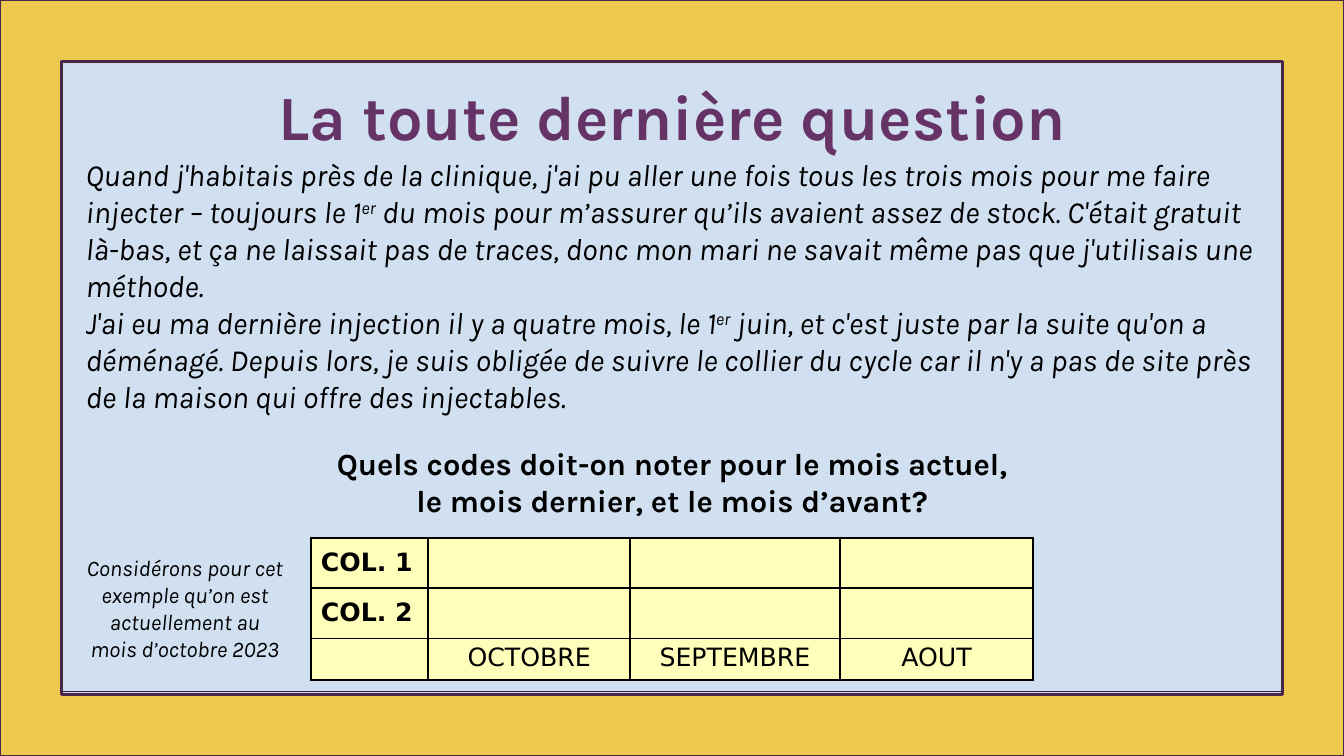
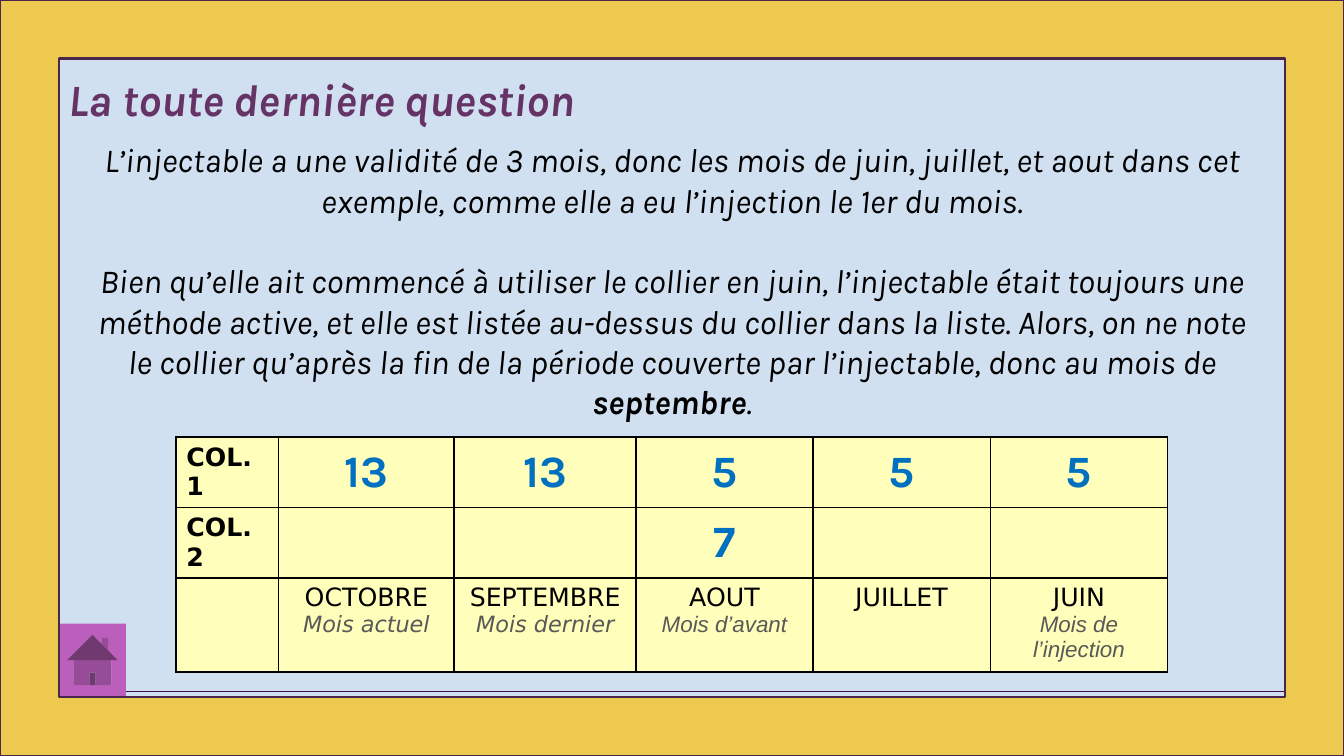
from lxml.etree import SubElement
from pptx import Presentation
from pptx.dml.color import RGBColor
from pptx.enum.shapes import MSO_CONNECTOR as Connector, MSO_SHAPE as Preset
from pptx.enum.text import MSO_ANCHOR as Anchor, PP_ALIGN as Align
from pptx.oxml.ns import qn
from pptx.util import Pt

WIDTH, HEIGHT = 960, 540
INK, PURPLE, BLUE, GREY = "000000", "663366", "0070C0", "595959"
SKY, GOLD, PLUM, RULE = "D1E0F0", "EDC950", "4B264B", "411044"
CREAM, ORCHID = "FFFEBA", "BC5FBC"
SANS, TABLE_FONT = "Karla", "DejaVu Sans"

TITLE = "La toute dernière question"
RAISED_ER = ("er", {"raised": True})
QUESTION = {"bold": True, "italic": False, "align": Align.CENTER}
STORY = [
    (["Quand j'habitais près de la clinique, j'ai pu aller une fois tous les trois mois pour me faire "
      "injecter – toujours le 1", RAISED_ER,
      " du mois pour m’assurer qu’ils avaient assez de stock. C'était gratuit là-bas, et ça ne laissait "
      "pas de traces, donc mon mari ne savait même pas que j'utilisais une méthode."], {}),
    (["J'ai eu ma dernière injection il y a quatre mois, le 1", RAISED_ER,
      " juin, et c'est juste par la suite qu'on a déménagé. Depuis lors, je suis obligée de suivre le "
      "collier du cycle car il n'y a pas de site près de la maison qui offre des injectables."], {}),
    (["Quels codes doit-on noter pour le mois actuel,"], {**QUESTION, "before": 21.6}),
    (["le mois dernier, et le mois d’avant?"], QUESTION),
]
ASSUMPTION = [(["Considérons pour cet exemple qu’on est actuellement au mois d’octobre 2023"], {})]
EXPLANATION = [
    (["L’injectable a une validité de 3 mois, donc les mois de juin, juillet, et aout dans cet exemple, "
      "comme elle a eu l’injection le 1er du mois."], {}),
    (["Bien qu’elle ait commencé à utiliser le collier en juin, l’injectable était toujours une méthode "
      "active, et elle est listée au-dessus du collier dans la liste. Alors, on ne note le collier "
      "qu’après la fin de la période couverte par l’injectable, donc au mois de ",
      ("septembre", {"bold": True}), "."], {"before": 28.8}),
]

QUESTION_MONTHS = [("OCTOBRE", "", TABLE_FONT), ("SEPTEMBRE", "", TABLE_FONT), ("AOUT", "", TABLE_FONT)]
ANSWER_MONTHS = [
    ("OCTOBRE", "Mois actuel", TABLE_FONT),
    ("SEPTEMBRE", "Mois dernier", TABLE_FONT),
    ("AOUT", "Mois d’avant", "Arial"),
    ("JUILLET", "", TABLE_FONT),
    ("JUIN", "Mois de l’injection", "Arial"),
]
NO_CODES = [[""] * 3, [""] * 3]
ANSWER_CODES = [["13", "13", "5", "5", "5"], ["", "", "7", "", ""]]


def color(value):
    return RGBColor.from_string(value)


def write_text(frame, paragraphs, **base):
    for index, (runs, changes) in enumerate(paragraphs):
        paragraph = frame.paragraphs[0] if index == 0 else frame.add_paragraph()
        style = {**base, **changes}
        paragraph.alignment = style.get("align", Align.LEFT)
        if "before" in style:
            paragraph.space_before = Pt(style["before"])
        for item in runs:
            text, extra = (item, {}) if isinstance(item, str) else item
            look = {**style, **extra}
            run = paragraph.add_run()
            run.text = text
            font = run.font
            font.name, font.size = look.get("font", SANS), Pt(look["size"])
            font.bold, font.italic = look.get("bold", False), look.get("italic", False)
            font.color.rgb = color(look.get("color", INK))
            if look.get("raised"):
                font._element.set("baseline", "30000")


def add_text(slide, box, paragraphs, inset=3.6, **style):
    frame = slide.shapes.add_textbox(*map(Pt, box)).text_frame
    frame.word_wrap = True
    frame.margin_top = Pt(inset)
    write_text(frame, paragraphs, **style)


def add_title(slide, box, **style):
    add_text(slide, box, [([TITLE], {})], inset=7.2, bold=True, color=PURPLE, **style)


def add_preset(slide, preset, box, fill, line=None):
    shape = slide.shapes.add_shape(preset, *map(Pt, box))
    shape.shadow.inherit = False
    shape.fill.solid()
    shape.fill.fore_color.rgb = color(fill)
    if line:
        shape.line.color.rgb = color(line)
        shape.line.width = Pt(2)
    else:
        shape.line.fill.background()
    return shape


def start_slide(presentation):
    slide = presentation.slides.add_slide(presentation.slide_layouts[6])
    slide.background.fill.solid()
    slide.background.fill.fore_color.rgb = color(SKY)
    rule = slide.shapes.add_connector(Connector.STRAIGHT, Pt(33), Pt(494), Pt(927), Pt(494))
    rule.line.color.rgb = color(RULE)
    rule.line.width = Pt(1.25)
    SubElement(rule._element.spPr, qn("a:effectLst"))
    return slide


def add_border(slide, thickness):
    border = add_preset(slide, Preset.FRAME, (0, 0, WIDTH, HEIGHT), GOLD, PLUM)
    border.adjustments[0] = thickness


def style_cell(cell):
    properties = cell._tc.get_or_add_tcPr()
    for side in ("lnL", "lnR", "lnT", "lnB"):
        edge = SubElement(properties, qn(f"a:{side}"), w=str(Pt(1.5)))
        SubElement(SubElement(edge, qn("a:solidFill")), qn("a:srgbClr"), val=INK)
    cell.fill.solid()
    cell.fill.fore_color.rgb = color(CREAM)


def add_code_table(slide, left, top, widths, heights, codes, months):
    box = (left, top, sum(widths), sum(heights))
    table = slide.shapes.add_table(len(heights), len(widths), *map(Pt, box)).table
    table.first_row = table.horz_banding = False
    for column, width in zip(table.columns, widths):
        column.width = Pt(width)
    for row, height in zip(table.rows, heights):
        row.height = Pt(height)
    for cell in table.iter_cells():
        style_cell(cell)

    for index, values in enumerate(codes):
        label = table.cell(index, 0)
        label.vertical_anchor = Anchor.MIDDLE
        write_text(label.text_frame, [([f"COL. {index + 1}"], {})], size=18, font=TABLE_FONT, bold=True)
        for position, value in enumerate(values, 1):
            if value:
                cell = table.cell(index, position)
                cell.vertical_anchor = Anchor.MIDDLE
                write_text(cell.text_frame, [([value], {})], size=32, bold=True, color=BLUE,
                           align=Align.CENTER)

    for position, (month, note, note_font) in enumerate(months, 1):
        lines = [([month], {})]
        if note:
            lines.append(([note], {"size": 16, "font": note_font, "color": GREY, "italic": True}))
        write_text(table.cell(len(codes), position).text_frame, lines, size=18, font=TABLE_FONT,
                   align=Align.CENTER)


def build_question(presentation):
    slide = start_slide(presentation)
    add_title(slide, (159, 48, 642, 72), size=45, align=Align.CENTER)
    add_text(slide, (54, 108, 852, 276), STORY, size=22, italic=True)
    add_border(slide, 0.081)
    add_code_table(slide, 222, 384, [84, 144, 150, 138], [36, 36, 29.5], NO_CODES, QUESTION_MONTHS)
    add_text(slide, (54, 392.5, 156, 85), ASSUMPTION, size=16, italic=True, align=Align.CENTER)


def build_answer(presentation):
    slide = start_slide(presentation)
    add_title(slide, (42, 44, 480, 70), size=32, italic=True)
    add_preset(slide, Preset.ACTION_BUTTON_HOME, (42, 445.5, 48, 52), ORCHID)
    add_text(slide, (59, 96, 842, 211), EXPLANATION, size=24, italic=True, align=Align.CENTER)
    add_border(slide, 0.078)
    add_code_table(slide, 126, 312, [73, 125.5, 130, 126, 127, 126.5], [50.4, 50.4, 67.2],
                   ANSWER_CODES, ANSWER_MONTHS)


def main():
    presentation = Presentation()
    presentation.slide_width, presentation.slide_height = Pt(WIDTH), Pt(HEIGHT)
    build_question(presentation)
    build_answer(presentation)
    presentation.save("out.pptx")


if __name__ == "__main__":
    main()
